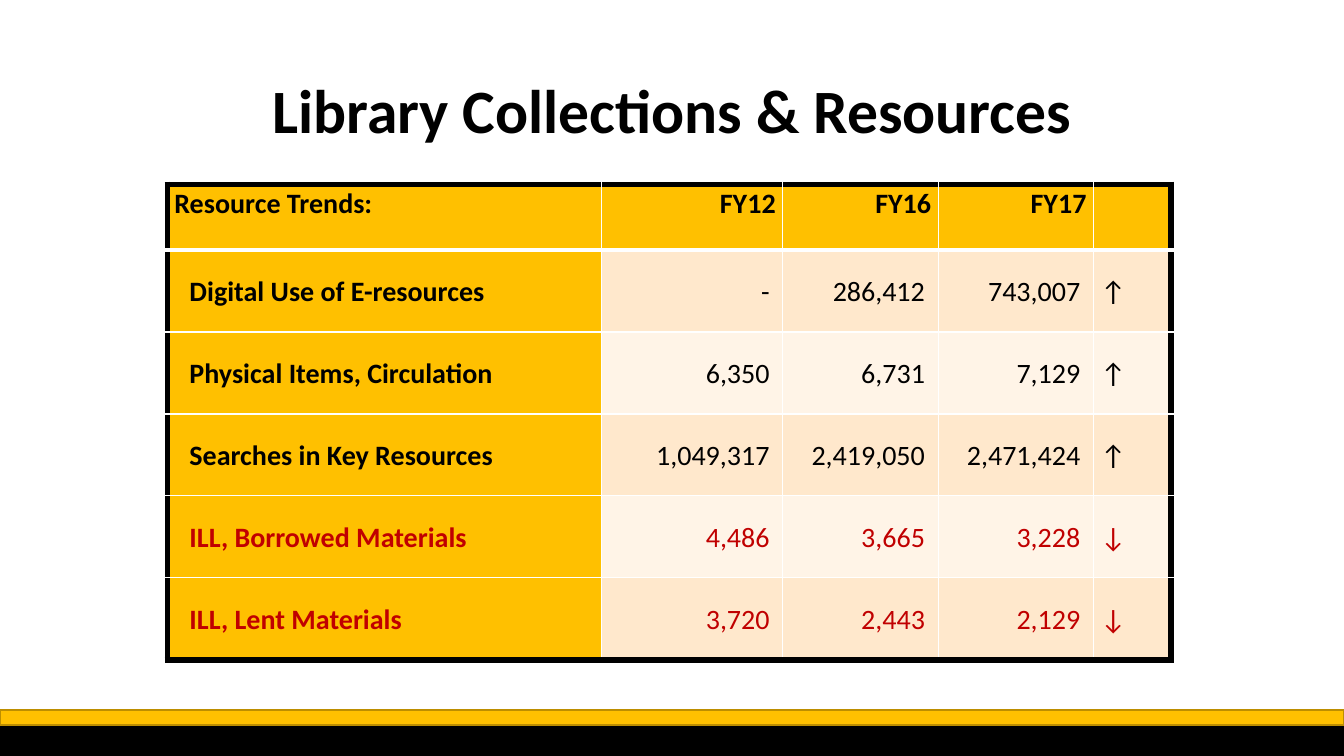
from lxml.etree import SubElement
from pptx import Presentation
from pptx.dml.color import RGBColor
from pptx.enum.shapes import MSO_SHAPE as Shape
from pptx.enum.text import MSO_ANCHOR as Anchor, PP_ALIGN as Align
from pptx.oxml.ns import qn
from pptx.util import Inches, Pt

WIDTH, HEIGHT = Inches(13.33), Inches(7.5)
FONT = "Calibri"
BLACK, WHITE, GOLD, DARK_GOLD, RED = "000000", "FFFFFF", "FFC000", "BD8E00", "C00000"
BANDS = "FFE8CC", "FFF4E7"

HEADINGS = "Resource Trends:", "FY12", "FY16", "FY17", ""
TRENDS = [
    ("Digital Use of E-resources", "-", "286,412", "743,007", "↑"),
    ("Physical Items, Circulation", "6,350", "6,731", "7,129", "↑"),
    ("Searches in Key Resources", "1,049,317", "2,419,050", "2,471,424", "↑"),
    ("ILL, Borrowed Materials", "4,486", "3,665", "3,228", "↓"),
    ("ILL, Lent Materials", "3,720", "2,443", "2,129", "↓"),
]
COLUMN_WEIGHTS = 4.3, 1.8, 1.54, 1.54, 0.77
HEADER_SHARE = 0.138
THIN, RULE, FRAME = 1, 3, 4.5
INSET, LABEL_INSET, VALUE_INSET = 0.07, 0.22, 0.13


def color(code):
    return RGBColor.from_string(code)


def place(left, top, width, height):
    """Turn shares of the slide into lengths."""
    return [round(share * side) for share, side in
            zip((left, top, width, height), (WIDTH, HEIGHT, WIDTH, HEIGHT))]


def write(frame, text, size, ink=BLACK, bold=True, align=Align.LEFT, spacing=1.07):
    para = frame.paragraphs[0]
    para.alignment, para.line_spacing = align, spacing
    span = para.add_run()
    span.text = text
    span.font.name, span.font.size, span.font.bold = FONT, Pt(size), bold
    span.font.color.rgb = color(ink)


def add_band(page, box, fill, edge):
    band = page.shapes.add_shape(Shape.RECTANGLE, *box)
    band.shadow.inherit = False
    band.fill.solid()
    band.fill.fore_color.rgb = color(fill)
    band.line.color.rgb = color(edge)
    band.line.width = Pt(1)


def add_footer(page):
    add_band(page, place(0, 0.948, 1, 0.052), BLACK, BLACK)
    add_band(page, place(0, 0.939, 1, 0.02), GOLD, DARK_GOLD)


def add_title(page, box, text):
    frame = page.shapes.add_textbox(*box).text_frame
    frame.word_wrap = True
    frame.vertical_anchor = Anchor.MIDDLE
    write(frame, text, 44, align=Align.CENTER, spacing=0.9)


def set_borders(cell, row, column):
    """Black outer frame, white inner lines, a thicker one below the header."""
    last_row, last_column = len(TRENDS), len(HEADINGS) - 1
    widths = {
        "a:lnL": FRAME if column == 0 else THIN,
        "a:lnR": FRAME if column == last_column else THIN,
        "a:lnT": {0: FRAME, 1: RULE}.get(row, THIN),
        "a:lnB": {0: RULE, last_row: FRAME}.get(row, THIN),
    }
    properties = cell._tc.get_or_add_tcPr()
    for tag, width in widths.items():
        line = SubElement(properties, qn(tag), w=str(Pt(width)))
        fill = SubElement(line, qn("a:solidFill"))
        SubElement(fill, qn("a:srgbClr"), val=BLACK if width == FRAME else WHITE)


def fill_cell(cell, row, column, text, ink):
    header, label = row == 0, column == 0
    value = 0 < column < len(HEADINGS) - 1
    set_borders(cell, row, column)
    cell.fill.solid()
    cell.fill.fore_color.rgb = color(GOLD if header or label else BANDS[(row - 1) % 2])
    cell.margin_top = cell.margin_bottom = 0
    cell.margin_left = Inches(LABEL_INSET if label and not header else INSET)
    cell.margin_right = Inches(VALUE_INSET if value and not header else INSET)
    cell.vertical_anchor = Anchor.TOP if header else Anchor.MIDDLE
    if text:
        write(cell.text_frame, text, 20, ink, header or label,
              Align.RIGHT if value else Align.LEFT)


def add_trends(page, box):
    rows = [HEADINGS, *TRENDS]
    width, height = box[2:]
    table = page.shapes.add_table(len(rows), len(HEADINGS), *box).table
    for column, weight in zip(table.columns, COLUMN_WEIGHTS):
        column.width = round(width * weight / sum(COLUMN_WEIGHTS))
    for r, texts in enumerate(rows):
        share = (1 - HEADER_SHARE) / len(TRENDS) if r else HEADER_SHARE
        table.rows[r].height = round(height * share)
        ink = RED if texts[-1] == "↓" else BLACK
        for c, text in enumerate(texts):
            fill_cell(table.cell(r, c), r, c, text, ink)


def main():
    deck = Presentation()
    deck.slide_width, deck.slide_height = WIDTH, HEIGHT
    page = deck.slides.add_slide(deck.slide_layouts[6])
    add_footer(page)
    add_title(page, place(0.069, 0.053, 0.863, 0.193), "Library Collections & Resources")
    add_trends(page, place(0.1245, 0.244, 0.747, 0.629))
    deck.save("out.pptx")


if __name__ == "__main__":
    main()
